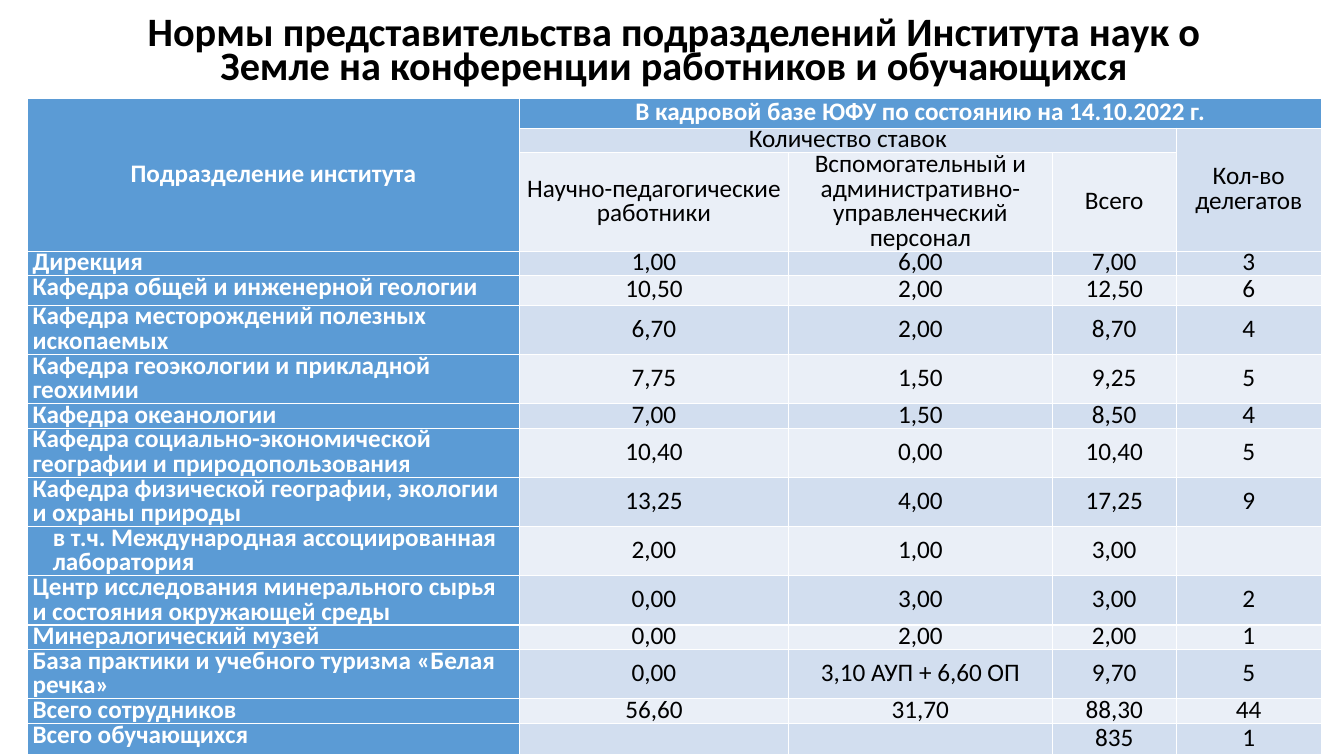
from pptx import Presentation
from pptx.dml.color import RGBColor
from pptx.enum.text import MSO_ANCHOR, PP_ALIGN
from pptx.util import Cm, Pt

COLORS = {"head": "5B9BD5", "band": "D2DEEF", "plain": "EAEFF7",
          "light": "FFFFFF", "dark": "000000"}

TITLE = ("Нормы представительства подразделений Института наук о Земле "
         "на конференции работников и обучающихся")
COLUMNS = [12.4, 6.78, 6.65, 3.12, 3.66]
LINE, LINES_2 = 0.62, 1.24
ROWS = [
    (0.74, ["Подразделение института",
            "В кадровой базе ЮФУ по состоянию на 14.10.2022 г.", "", "", ""]),
    (LINE, ["", "Количество ставок", "", "", "Кол-во делегатов"]),
    (4 * LINE, ["", "Научно-педагогические работники",
                "Вспомогательный и административно-управленческий персонал",
                "Всего", ""]),
    (LINE, ["Дирекция", "1,00", "6,00", "7,00", "3"]),
    (0.74, ["Кафедра общей и инженерной геологии", "10,50", "2,00", "12,50", "6"]),
    (LINES_2, ["Кафедра месторождений полезных ископаемых",
               "6,70", "2,00", "8,70", "4"]),
    (LINES_2, ["Кафедра геоэкологии и прикладной геохимии",
               "7,75", "1,50", "9,25", "5"]),
    (LINE, ["Кафедра океанологии", "7,00", "1,50", "8,50", "4"]),
    (LINES_2, ["Кафедра социально-экономической географии и природопользования",
               "10,40", "0,00", "10,40", "5"]),
    (LINES_2, ["Кафедра физической географии, экологии и охраны природы",
               "13,25", "4,00", "17,25", "9"]),
    (LINES_2, ["в т.ч. Международная ассоциированная лаборатория",
               "2,00", "1,00", "3,00", ""]),
    (LINES_2, ["Центр исследования минерального сырья и состояния окружающей среды",
               "0,00", "3,00", "3,00", "2"]),
    (LINE, ["Минералогический музей", "0,00", "2,00", "2,00", "1"]),
    (LINES_2, ["База практики и учебного туризма «Белая речка»",
               "0,00", "3,10 АУП + 6,60 ОП", "9,70", "5"]),
    (LINE, ["Всего сотрудников", "56,60", "31,70", "88,30", "44"]),
    (0.78, ["Всего обучающихся", "", "", "835", "1"]),
]
MERGES = [((0, 0), (2, 0)), ((0, 1), (0, 4)), ((1, 1), (1, 3)), ((1, 4), (2, 4))]
HEADER_ROWS = 3
INDENTED_ROW = 10


def write(tf, text, size=18, color="dark", bold=False,
          align=PP_ALIGN.CENTER, spacing=0.8, indent=0):
    p = tf.paragraphs[0]
    p.alignment = align
    p.line_spacing = spacing
    if indent:
        p._p.get_or_add_pPr().set("marL", str(Cm(indent)))
    if text:
        r = p.add_run()
        r.text = text
        r.font.name = "Calibri"
        r.font.size = Pt(size)
        r.font.bold = bold
        r.font.color.rgb = RGBColor.from_string(COLORS[color])


class SlideBuilder:
    """Holds the slide and draws its title and table."""

    def __init__(self, slide):
        self.slide = slide

    def title(self, text, x, y, w, h):
        sp = self.slide.shapes.add_textbox(Cm(x), Cm(y), Cm(w), Cm(h))
        tf = sp.text_frame
        tf.word_wrap = True
        tf.vertical_anchor = MSO_ANCHOR.MIDDLE
        write(tf, text, size=28.8, bold=True, spacing=0.7)

    def cell(self, cell, text, row, col):
        head = row == 0 or col == 0
        label = col == 0 and row >= HEADER_ROWS
        fill = "head" if head else "band" if row % 2 else "plain"
        cell.fill.solid()
        cell.fill.fore_color.rgb = RGBColor.from_string(COLORS[fill])
        cell.margin_left = cell.margin_right = Cm(0.13)
        cell.margin_top = cell.margin_bottom = 0
        top = label and row > HEADER_ROWS
        cell.vertical_anchor = MSO_ANCHOR.TOP if top else MSO_ANCHOR.MIDDLE
        write(cell.text_frame, text, bold=head,
              color="light" if head else "dark",
              align=PP_ALIGN.LEFT if label else PP_ALIGN.CENTER,
              indent=0.51 if label and row == INDENTED_ROW else 0)

    def table(self, x, y, columns, rows, merges):
        height = sum(h for h, _ in rows)
        frame = self.slide.shapes.add_table(
            len(rows), len(columns), Cm(x), Cm(y), Cm(sum(columns)), Cm(height))
        tbl = frame.table
        tbl.first_col = True
        for col, width in enumerate(columns):
            tbl.columns[col].width = Cm(width)
        for row, (h, texts) in enumerate(rows):
            tbl.rows[row].height = Cm(h)
            for col, text in enumerate(texts):
                self.cell(tbl.cell(row, col), text, row, col)
        for first, last in merges:
            tbl.cell(*first).merge(tbl.cell(*last))


def main():
    prs = Presentation()
    prs.slide_width, prs.slide_height = Cm(33.87), Cm(19.05)
    s = SlideBuilder(prs.slides.add_slide(prs.slide_layouts[6]))
    s.title(TITLE, 2.39, 0.41, 29.21, 1.85)
    s.table(0.69, 2.49, COLUMNS, ROWS, MERGES)
    prs.save("out.pptx")


if __name__ == "__main__":
    main()
